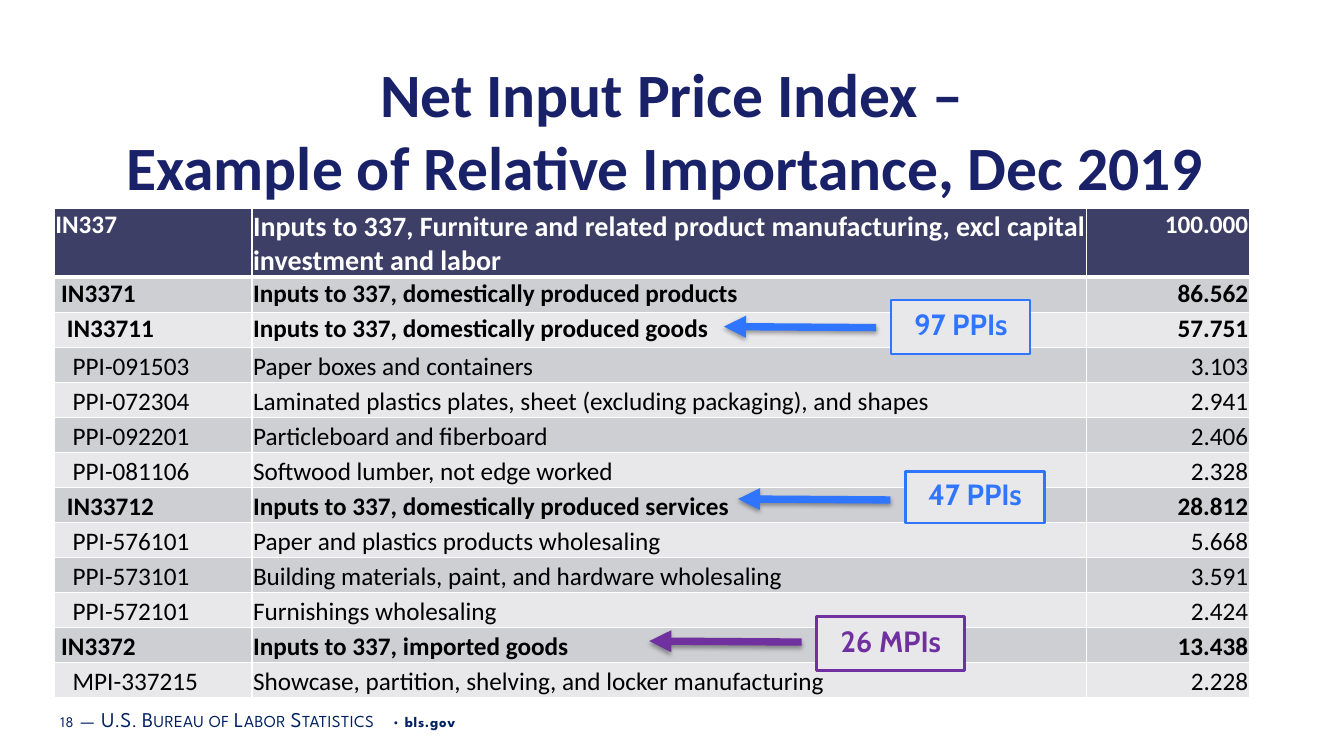
from dataclasses import dataclass

from lxml import etree
from pptx import Presentation
from pptx.dml.color import RGBColor
from pptx.enum.shapes import MSO_CONNECTOR, MSO_SHAPE
from pptx.enum.text import MSO_ANCHOR, MSO_AUTO_SIZE, PP_ALIGN
from pptx.oxml import parse_xml
from pptx.oxml.ns import nsdecls, qn
from pptx.util import Inches, Pt

TOP, MIDDLE, BOTTOM = MSO_ANCHOR.TOP, MSO_ANCHOR.MIDDLE, MSO_ANCHOR.BOTTOM
LEFT, CENTER, RIGHT = PP_ALIGN.LEFT, PP_ALIGN.CENTER, PP_ALIGN.RIGHT
TITLE_ONLY = 5


@dataclass(frozen=True)
class Theme:
    title: str = "192168"
    header: str = "3E3F67"
    bands: tuple = ("CECFD3", "E8E8EB")
    white: str = "FFFFFF"
    black: str = "000000"
    footer: str = "002060"
    blue: str = "3075FF"
    purple: str = "7030A0"
    body_font: str = "Calibri"
    label_font: str = "Cabin"
    footer_font: str = "League Spartan"
    title_size: float = 44
    header_size: float = 20
    body_size: float = 18
    label_size: float = 20.9


THEME = Theme()

# Code indent level, bold, code, description, relative importance
ROWS = [
    (0, True, "IN337", "Inputs to 337, Furniture and related product manufacturing, "
                       "excl capital investment and labor", "100.000"),
    (1, True, "IN3371", "Inputs to 337, domestically produced products", "86.562"),
    (2, True, "IN33711", "Inputs to 337, domestically produced goods", "57.751"),
    (3, False, "PPI-091503", "Paper boxes and containers", "3.103"),
    (3, False, "PPI-072304", "Laminated plastics plates, sheet (excluding packaging), "
                             "and shapes", "2.941"),
    (3, False, "PPI-092201", "Particleboard and fiberboard", "2.406"),
    (3, False, "PPI-081106", "Softwood lumber, not edge worked", "2.328"),
    (2, True, "IN33712", "Inputs to 337, domestically produced services", "28.812"),
    (3, False, "PPI-576101", "Paper and plastics products wholesaling", "5.668"),
    (3, False, "PPI-573101", "Building materials, paint, and hardware wholesaling", "3.591"),
    (3, False, "PPI-572101", "Furnishings wholesaling", "2.424"),
    (1, True, "IN3372", "Inputs to 337, imported goods", "13.438"),
    (3, False, "MPI-337215", "Showcase, partition, shelving, and locker manufacturing", "2.228"),
]

# Text, colour, outline width, box relative to the table, arrow height within the box
CALLOUTS = [
    ("97 PPIs", THEME.blue, 1.5, (8.30, 0.91, 1.38, 0.53), 0.27),
    ("47 PPIs", THEME.blue, 2, (8.44, 2.61, 1.38, 0.51), 0.28),
    ("26 MPIs", THEME.purple, 2.25, (7.56, 4.05, 1.47, 0.53), 0.25),
]

# Text, size, letter spacing in hundredths of a point, small capitals, bold
FOOTER_RUNS = [
    ("18", 10.5, 50, False, False),
    (" ", 16, 50, False, False),
    ("—", 15, 30, True, False),
    (" ", 16, 50, False, False),
    ("U.S. Bureau of Labor Statistics", 15, 30, True, False),
    (" • ", 10.5, 50, False, False),
    ("bls.gov", 10.5, 50, False, True),
]


def inches(*lengths):
    return [Inches(length) for length in lengths]


def style_font(font, name, size, color, bold=False):
    font.name, font.size, font.bold = name, Pt(size), bold
    font.color.rgb = RGBColor.from_string(color)


def add_title(slide, box):
    title = slide.shapes.title
    title.left, title.top, title.width, title.height = inches(*box)
    frame = title.text_frame
    frame.text = "Net Input Price Index –\vExample of Relative Importance, Dec 2019 "
    frame.word_wrap = True
    frame.auto_size = MSO_AUTO_SIZE.NONE
    frame.vertical_anchor = TOP
    paragraph = frame.paragraphs[0]
    paragraph.alignment = CENTER
    for run in paragraph.runs:
        style_font(run.font, THEME.body_font, THEME.title_size, THEME.title, True)


def add_borders(cell, bottom_width, top_width):
    properties = cell._tc.get_or_add_tcPr()
    for side, width in (("L", 1), ("R", 1), ("T", top_width), ("B", bottom_width)):
        properties.append(parse_xml(
            f'<a:ln{side} {nsdecls("a")} w="{Pt(width)}"><a:solidFill>'
            f'<a:srgbClr val="{THEME.white}"/></a:solidFill></a:ln{side}>'))


def add_importance_table(slide, box):
    left, top, width, height = box
    column_shares = (1.96 / 11.85, 8.28 / 11.85, 1.61 / 11.85)
    header_height = 0.68
    row_height = (height - header_height) / (len(ROWS) - 1)
    table = slide.shapes.add_table(len(ROWS), 3, *inches(*box)).table
    for column, share in zip(table.columns, column_shares):
        column.width = Inches(width * share)
    for index, (level, bold, *texts) in enumerate(ROWS):
        is_header = index == 0
        table.rows[index].height = Inches(header_height if is_header else row_height)
        fill = THEME.header if is_header else THEME.bands[(index - 1) % 2]
        for column, text in enumerate(texts):
            cell = table.cell(index, column)
            indent = 0.057 * level if column == 0 else 0
            cell.margin_left = Inches(0.01 + indent)
            cell.margin_right = cell.margin_top = Inches(0.01)
            cell.margin_bottom = 0
            cell.vertical_anchor = TOP if index < 3 else BOTTOM
            add_borders(cell, 3 if is_header else 1, 3 if index == 1 else 1)
            cell.fill.solid()
            cell.fill.fore_color.rgb = RGBColor.from_string(fill)
            cell.text_frame.text = text
            paragraph = cell.text_frame.paragraphs[0]
            paragraph.alignment = RIGHT if column == 2 else LEFT
            size = THEME.header_size if is_header and column == 1 else THEME.body_size
            color = THEME.white if is_header else THEME.black
            style_font(paragraph.runs[0].font, THEME.body_font, size, color, bold)


def add_arrow(slide, start_x, start_y, length, color):
    arrow = slide.shapes.add_connector(
        MSO_CONNECTOR.STRAIGHT,
        *inches(start_x, start_y, start_x - length, start_y - 0.01))
    arrow.line.color.rgb = RGBColor.from_string(color)
    arrow.line.width = Pt(5.25)
    etree.SubElement(arrow.line._get_or_add_ln(), qn("a:tailEnd"), type="triangle")
    arrow._element.spPr.append(parse_xml(
        f'<a:effectLst {nsdecls("a")}><a:outerShdw blurRad="{Pt(3.1)}" dist="{Pt(1.8)}" '
        f'dir="5400000" rotWithShape="0"><a:srgbClr val="{THEME.black}">'
        '<a:alpha val="35000"/></a:srgbClr></a:outerShdw></a:effectLst>'))


def add_callout(slide, table_box, text, color, outline, offset, arrow_offset):
    left, top = table_box[0] + offset[0], table_box[1] + offset[1]
    add_arrow(slide, left - 0.15, top + arrow_offset, 1.51, color)
    label = slide.shapes.add_shape(MSO_SHAPE.RECTANGLE, *inches(left, top, *offset[2:]))
    label.shadow.inherit = False
    label.fill.solid()
    label.fill.fore_color.rgb = RGBColor.from_string(THEME.bands[1])
    label.line.color.rgb = RGBColor.from_string(color)
    label.line.width = Pt(outline)
    frame = label.text_frame
    frame.text = text
    frame.vertical_anchor = MIDDLE
    paragraph = frame.paragraphs[0]
    paragraph.alignment = CENTER
    paragraph.line_spacing = 0.8
    style_font(paragraph.runs[0].font, THEME.label_font, THEME.label_size, color, True)


def add_footer(slide, box):
    frame = slide.shapes.add_textbox(*inches(*box)).text_frame
    frame.word_wrap = True
    frame.vertical_anchor = MIDDLE
    frame.margin_left = frame.margin_right = Inches(0.07)
    frame.margin_top = frame.margin_bottom = Inches(0.04)
    for text, size, spacing, small_caps, bold in FOOTER_RUNS:
        run = frame.paragraphs[0].add_run()
        run.text = text
        style_font(run.font, THEME.footer_font, size, THEME.footer, bold)
        properties = run._r.get_or_add_rPr()
        properties.set("spc", str(spacing))
        if small_caps:
            properties.set("cap", "small")


def main():
    presentation = Presentation()
    presentation.slide_width, presentation.slide_height = inches(13.33, 7.5)
    slide = presentation.slides.add_slide(presentation.slide_layouts[TITLE_ONLY])
    table_box = (0.54, 2.07, 11.85, 4.85)
    add_footer(slide, (0.53, 6.93, 8.47, 0.4))
    add_title(slide, (0.54, 0.5, 12.25, 0.88))
    add_importance_table(slide, table_box)
    for callout in CALLOUTS:
        add_callout(slide, table_box, *callout)
    presentation.save("out.pptx")


if __name__ == "__main__":
    main()
